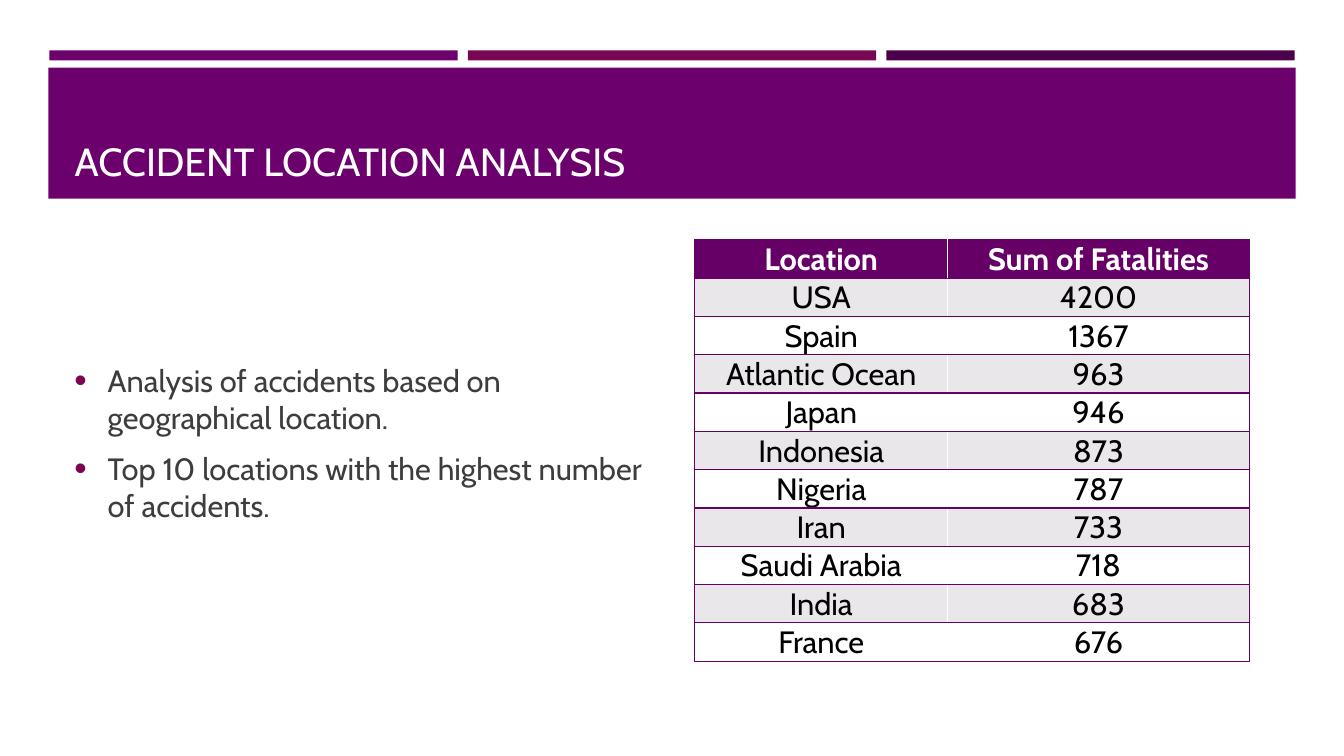
import pptx
import pptx.chart.data
import pptx.dml.color
import pptx.enum.shapes
import pptx.enum.text
import pptx.oxml
import pptx.oxml.ns
import pptx.util
from dataclasses import dataclass

Inches = pptx.util.Inches
Pt = pptx.util.Pt
Anchor = pptx.enum.text.MSO_ANCHOR
Align = pptx.enum.text.PP_ALIGN


@dataclass(frozen=True)
class Theme:
    font: str = "Cabin"
    head: int = 28
    text: int = 22
    band: str = "6C006C"
    plum: str = "790753"
    dark: str = "4C004C"
    grid: str = "660066"
    tint: str = "EAE7EA"
    white: str = "FFFFFF"
    black: str = "000000"
    grey: str = "3D3D3D"


theme = Theme()

title = "ACCIDENT LOCATION ANALYSIS"
points = [
    "Analysis of accidents based on geographical location.",
    "Top 10 locations with the highest number of accidents.",
]
rows = [
    ("Location", "Sum of Fatalities"),
    ("USA", "4200"),
    ("Spain", "1367"),
    ("Atlantic Ocean", "963"),
    ("Japan", "946"),
    ("Indonesia", "873"),
    ("Nigeria", "787"),
    ("Iran", "733"),
    ("Saudi Arabia", "718"),
    ("India", "683"),
    ("France", "676"),
]
widths = (2.51, 2.99)
row_high = 0.38
strips = (theme.band, theme.plum, theme.dark)
strip_wide = 4.05
strip_step = 4.15


def rgb(code):
    return pptx.dml.color.RGBColor.from_string(code)


def parse_xml(tag, attrs="", inner=""):
    space = pptx.oxml.ns.nsdecls("a")
    return pptx.oxml.parse_xml(f"<a:{tag} {space} {attrs}>{inner}</a:{tag}>")


def add_run(para, text, size, color, bold=False):
    run = para.add_run()
    run.text = text
    font = run.font
    font.name, font.size, font.bold = theme.font, Pt(size), bold
    font.color.rgb = rgb(color)


def add_bar(slide, left, top, wide, high, color):
    kind = pptx.enum.shapes.MSO_SHAPE.RECTANGLE
    bar = slide.shapes.add_shape(
        kind, Inches(left), Inches(top), Inches(wide), Inches(high))
    bar.shadow.inherit = False
    bar.fill.solid()
    bar.fill.fore_color.rgb = rgb(color)
    bar.line.fill.background()


def add_title(slide):
    box = slide.shapes.title
    box.left, box.top = Inches(0.64), Inches(0.77)
    box.width, box.height = Inches(12.06), Inches(1.11)
    box.element.getparent().append(box.element)
    frame = box.text_frame
    frame.auto_size = pptx.enum.text.MSO_AUTO_SIZE.NONE
    frame.vertical_anchor = Anchor.BOTTOM
    para = frame.paragraphs[0]
    para.alignment = Align.LEFT
    add_run(para, title, theme.head, theme.white)


def add_points(slide):
    box = slide.shapes.add_textbox(
        Inches(0.64), Inches(2.38), Inches(6.03), Inches(4.02))
    frame = box.text_frame
    frame.word_wrap = True
    frame.vertical_anchor = Anchor.MIDDLE
    for at, text in enumerate(points):
        para = frame.add_paragraph() if at else frame.paragraphs[0]
        add_run(para, text, theme.text, theme.grey)
        props = para._p.get_or_add_pPr()
        props.set("marL", str(Inches(0.33)))
        props.set("indent", str(-Inches(0.33)))
        for part in (
            parse_xml("spcBef", inner='<a:spcPct val="20000"/>'),
            parse_xml("spcAft", inner='<a:spcPts val="600"/>'),
            parse_xml("buClr", inner=f'<a:srgbClr val="{theme.plum}"/>'),
            parse_xml("buSzPct", 'val="115000"'),
            parse_xml("buFont", 'typeface="Arial"'),
            parse_xml("buChar", 'char="•"'),
        ):
            props.append(part)


def add_edges(cell, sides):
    props = cell._tc.get_or_add_tcPr()
    fill = f'<a:solidFill><a:srgbClr val="{theme.grid}"/></a:solidFill>'
    for at, side in enumerate(sides):
        props.insert(at, parse_xml(f"ln{side}", f'w="{Pt(1)}"', fill))


def add_cell(cell, text, row, col):
    cell.margin_left = cell.margin_right = cell.margin_top = Inches(0.01)
    cell.margin_bottom = 0
    cell.vertical_anchor = Anchor.MIDDLE
    back = (theme.white, theme.tint)[row % 2] if row else theme.grid
    cell.fill.solid()
    cell.fill.fore_color.rgb = rgb(back)
    para = cell.text_frame.paragraphs[0]
    para.alignment = Align.CENTER
    color = theme.black if row else theme.white
    add_run(para, text, theme.text, color, row == 0)
    add_edges(cell, "RTB" if col else "LTB")


def add_grid(slide):
    table = slide.shapes.add_table(
        len(rows), len(widths), Inches(6.89), Inches(2.38),
        Inches(sum(widths)), Inches(row_high * len(rows))).table
    for col, wide in enumerate(widths):
        table.columns[col].width = Inches(wide)
    for row, texts in enumerate(rows):
        table.rows[row].height = Inches(row_high)
        for col, text in enumerate(texts):
            add_cell(table.cell(row, col), text, row, col)


def main():
    deck = pptx.Presentation()
    deck.slide_width, deck.slide_height = Inches(13.33), Inches(7.5)
    slide = deck.slides.add_slide(deck.slide_layouts[5])
    for at, color in enumerate(strips):
        add_bar(slide, 0.49 + at * strip_step, 0.5, strip_wide, 0.1, color)
    add_bar(slide, 0.48, 0.67, 12.37, 1.3, theme.band)
    add_title(slide)
    add_points(slide)
    add_grid(slide)
    deck.save("out.pptx")


if __name__ == "__main__":
    main()
